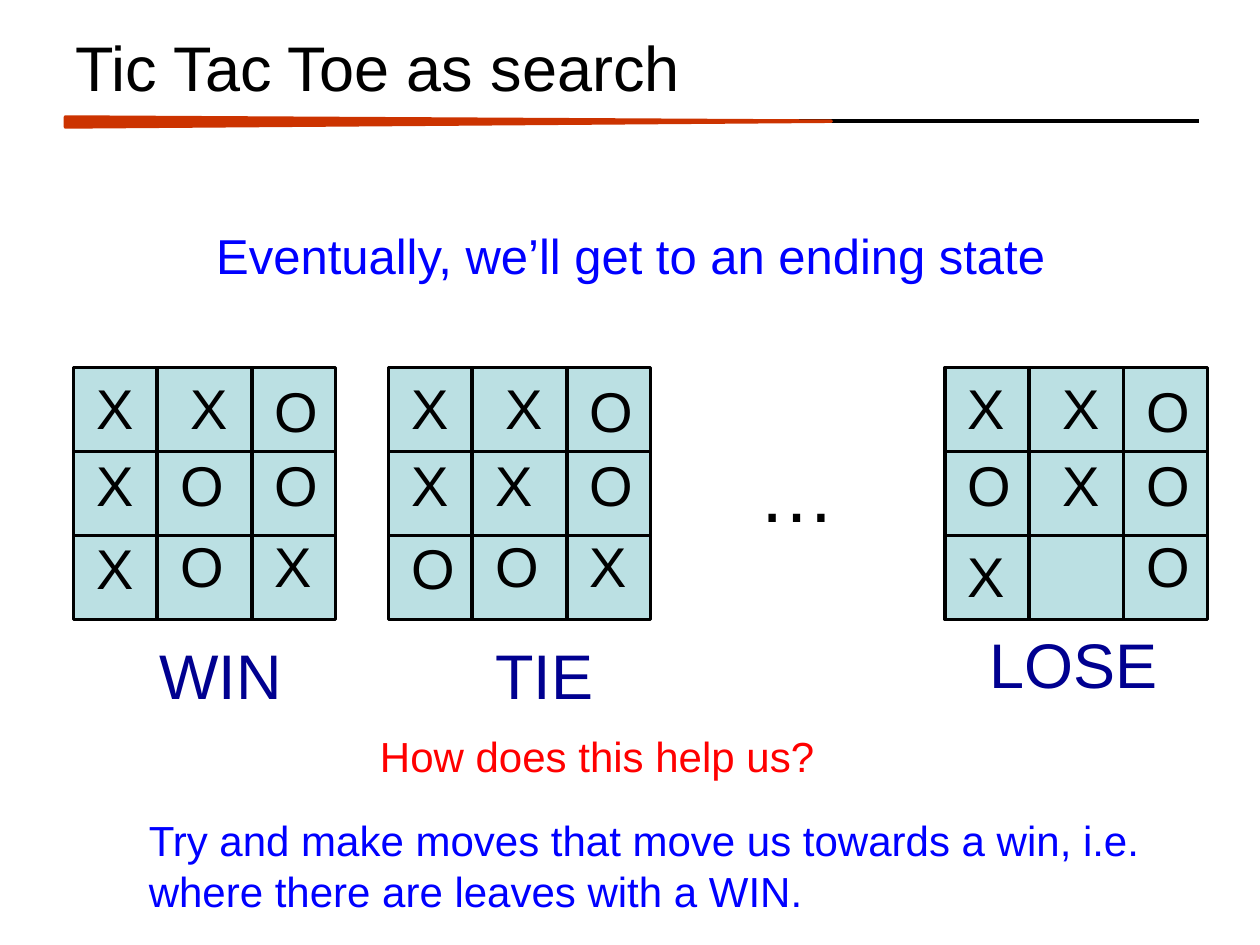
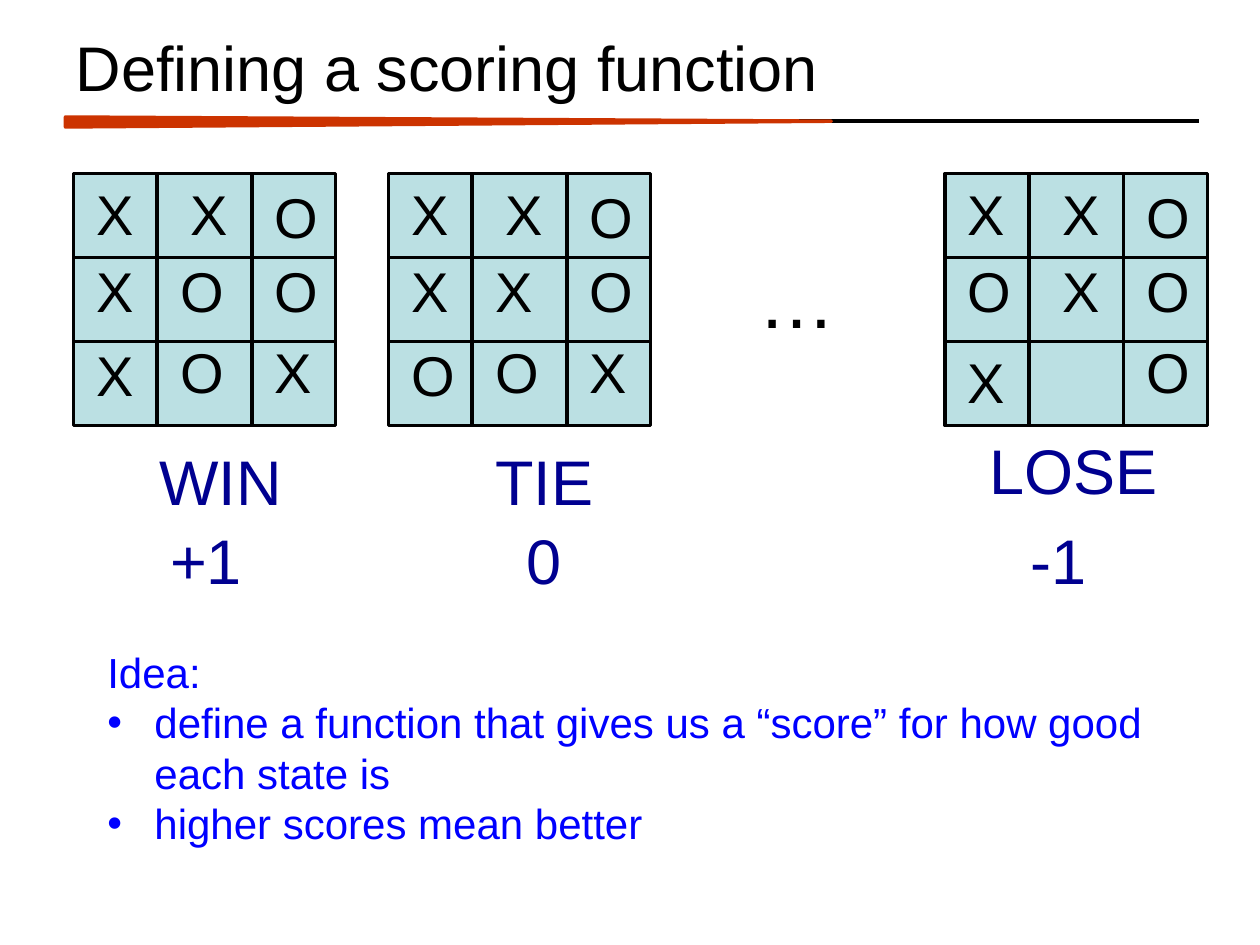
"""Build two slides on tic tac toe as a search problem."""
from dataclasses import dataclass, field

from lxml import etree
from pptx import Presentation
from pptx import util as u
from pptx.dml.color import RGBColor
from pptx.enum import shapes, text
from pptx.oxml.ns import qn

FONT = "Arial"
BLACK, BLUE, NAVY, RED = "000000", "0000FF", "000090", "FF0000"
BAND, BOARD_FILL = "CC3300", "BBE0E3"
LINE_WIDTH = u.Pt(2)

BOARD_WIDTH, BOARD_HEIGHT = 5.29, 5.08
COLUMN_LINES = (1.69, 3.6)
ROW_LINES = (BOARD_HEIGHT / 3, BOARD_HEIGHT * 2 / 3)
MARK_LEFTS = (0.21, 1.91, 3.81)
MARK_TOPS = (0, 1.55, 3.18)
MARK_SIZE = (1.69, 1.63)
NUDGES = {(0, 1): (0.21, 0), (0, 2): (0, 0.05), (2, 0): (0, 0.05)}


@dataclass
class Label:
    content: str
    left: float
    drop: float
    width: float


@dataclass
class Board:
    left: float
    rows: tuple[str, str, str]
    result: Label
    score: Label
    nudges: dict = field(default_factory=dict)


BOARDS = (
    Board(1.48, ("XXO", "XOO", "XOX"),
          Label("WIN", 2.96, 5.29, 4.87), Label("+1", 3.18, 6.88, 2.96)),
    Board(7.83, ("XXO", "XXO", "OOX"),
          Label("TIE", 9.74, 5.29, 2.96), Label("0", 10.37, 6.88, 1.48)),
    Board(19.05, ("XXO", "OXO", "X O"),
          Label("LOSE", 19.69, 5.08, 4.87), Label("-1", 20.53, 6.88, 2.12),
          {(1, 1): (0.21, 0), (2, 0): (0, 0.2)}),
)


def colour(value: str) -> RGBColor:
    return RGBColor.from_string(value)


def set_font(paragraph, size: float, value: str) -> None:
    paragraph.font.name = FONT
    paragraph.font.size = u.Pt(size)
    paragraph.font.color.rgb = colour(value)


def place(shape, left: float, top: float, width: float, height: float) -> None:
    shape.left, shape.top = u.Cm(left), u.Cm(top)
    shape.width, shape.height = u.Cm(width), u.Cm(height)


def add_text(slide, content: str, left: float, top: float, width: float,
             height: float, size: float, value: str, wrap: bool = True) -> None:
    box = slide.shapes.add_textbox(u.Cm(left), u.Cm(top), u.Cm(width), u.Cm(height))
    frame = box.text_frame
    frame.word_wrap = wrap
    frame.auto_size = text.MSO_AUTO_SIZE.SHAPE_TO_FIT_TEXT
    frame.text = content
    set_font(frame.paragraphs[0], size, value)


def add_line(parent, x1: float, y1: float, x2: float, y2: float) -> None:
    line = parent.shapes.add_connector(
        shapes.MSO_CONNECTOR.STRAIGHT, u.Cm(x1), u.Cm(y1), u.Cm(x2), u.Cm(y2))
    line.line.color.rgb = colour(BLACK)
    line.line.width = LINE_WIDTH
    properties = line._element.find(qn("p:spPr"))
    etree.SubElement(properties, qn("a:effectLst"))


def add_filled(parent, kind, left: float, top: float, width: float,
               height: float, fill: str, outline: str):
    shape = parent.shapes.add_shape(
        kind, u.Cm(left), u.Cm(top), u.Cm(width), u.Cm(height))
    shape.shadow.inherit = False
    shape.fill.solid()
    shape.fill.fore_color.rgb = colour(fill)
    shape.line.color.rgb = colour(outline)
    shape.line.width = LINE_WIDTH
    return shape


def add_titled_slide(presentation, layout: int, title: str):
    slide = presentation.slides.add_slide(presentation.slide_layouts[layout])
    add_line(slide, 1.32, 2.44, 24.18, 2.44)
    wedge = add_filled(slide, shapes.MSO_SHAPE.ISOSCELES_TRIANGLE,
                       8.94, -5.26, 0.2, 15.44, BAND, BAND)
    wedge.rotation = 90
    wedge.adjustments[0] = 0.42
    heading = slide.shapes.title
    place(heading, 1.27, 0.43, 22.86, 1.83)
    frame = heading.text_frame
    frame.text = title
    frame.auto_size = text.MSO_AUTO_SIZE.NONE
    frame.vertical_anchor = text.MSO_ANCHOR.MIDDLE
    frame.paragraphs[0].alignment = text.PP_ALIGN.LEFT
    set_font(frame.paragraphs[0], 36, BLACK)
    return slide


def add_board(slide, board: Board, top: float) -> None:
    right, bottom = board.left + BOARD_WIDTH, top + BOARD_HEIGHT
    grid = slide.shapes.add_group_shape()
    add_filled(grid, shapes.MSO_SHAPE.RECTANGLE, board.left, top,
               BOARD_WIDTH, BOARD_HEIGHT, BOARD_FILL, BLACK)
    for offset in COLUMN_LINES:
        add_line(grid, board.left + offset, top, board.left + offset, bottom)
    for offset in ROW_LINES:
        add_line(grid, board.left, top + offset, right, top + offset)

    nudges = NUDGES | board.nudges
    for row, marks in enumerate(board.rows):
        for column, mark in enumerate(marks):
            if mark != " ":
                across, down = nudges.get((row, column), (0, 0))
                add_text(slide, mark, board.left + MARK_LEFTS[column] + across,
                         top + MARK_TOPS[row] + down, *MARK_SIZE, 32, BLACK)


def add_label(slide, label: Label, top: float) -> None:
    add_text(slide, label.content, label.left, top + label.drop,
             label.width, 1.8, 36, NAVY)


def add_end_states(slide, top: float) -> None:
    for board in BOARDS:
        add_board(slide, board, top)
        add_label(slide, board.result, top)
    add_text(slide, "…", 15.04, top + 1.45, 5.72, 2.13, 44, BLACK)


def set_bullet(paragraph, bullet: str) -> None:
    properties = paragraph._p.get_or_add_pPr()
    indent = u.Cm(0.95) if bullet else 0
    properties.set("marL", str(indent))
    properties.set("indent", str(-indent))
    if bullet:
        etree.SubElement(properties, qn("a:buFont"), typeface=FONT)
        etree.SubElement(properties, qn("a:buChar"), char=bullet)
    else:
        etree.SubElement(properties, qn("a:buNone"))


def add_idea(slide) -> None:
    body = slide.placeholders[1]
    place(body, 1.91, 12.9, 21.39, 4.37)
    frame = body.text_frame
    frame.text = "\n".join((
        "Idea:",
        "define a function that gives us a “score” for how good each state is",
        "higher scores mean better",
    ))
    frame.auto_size = text.MSO_AUTO_SIZE.NONE
    frame.vertical_anchor = text.MSO_ANCHOR.TOP
    for index, paragraph in enumerate(frame.paragraphs):
        paragraph.space_before = u.Pt(0)
        set_bullet(paragraph, "•" if index else "")
        set_font(paragraph, 24, BLUE)


def build_search_slide(presentation) -> None:
    slide = add_titled_slide(presentation, 5, "Tic Tac Toe as search")
    add_end_states(slide, 7.41)
    add_text(slide, "Eventually, we’ll get to an ending state",
             4.11, 4.42, 17.98, 1.45, 28, BLUE)
    add_text(slide, "How does this help us?", 7.41, 14.6, 9.35, 1.27, 24, RED, wrap=False)
    add_text(slide, "Try and make moves that move us towards a win, i.e. "
             "where there are leaves with a WIN.", 2.75, 16.3, 21.39, 2.31, 24, BLUE)


def build_scoring_slide(presentation) -> None:
    slide = add_titled_slide(presentation, 1, "Defining a scoring function")
    top = 3.5
    add_end_states(slide, top)
    for board in BOARDS:
        add_label(slide, board.score, top)
    add_idea(slide)


def main() -> None:
    presentation = Presentation()
    presentation.slide_width, presentation.slide_height = u.Cm(25.4), u.Cm(19.05)
    build_search_slide(presentation)
    build_scoring_slide(presentation)
    presentation.save("out.pptx")


if __name__ == "__main__":
    main()
